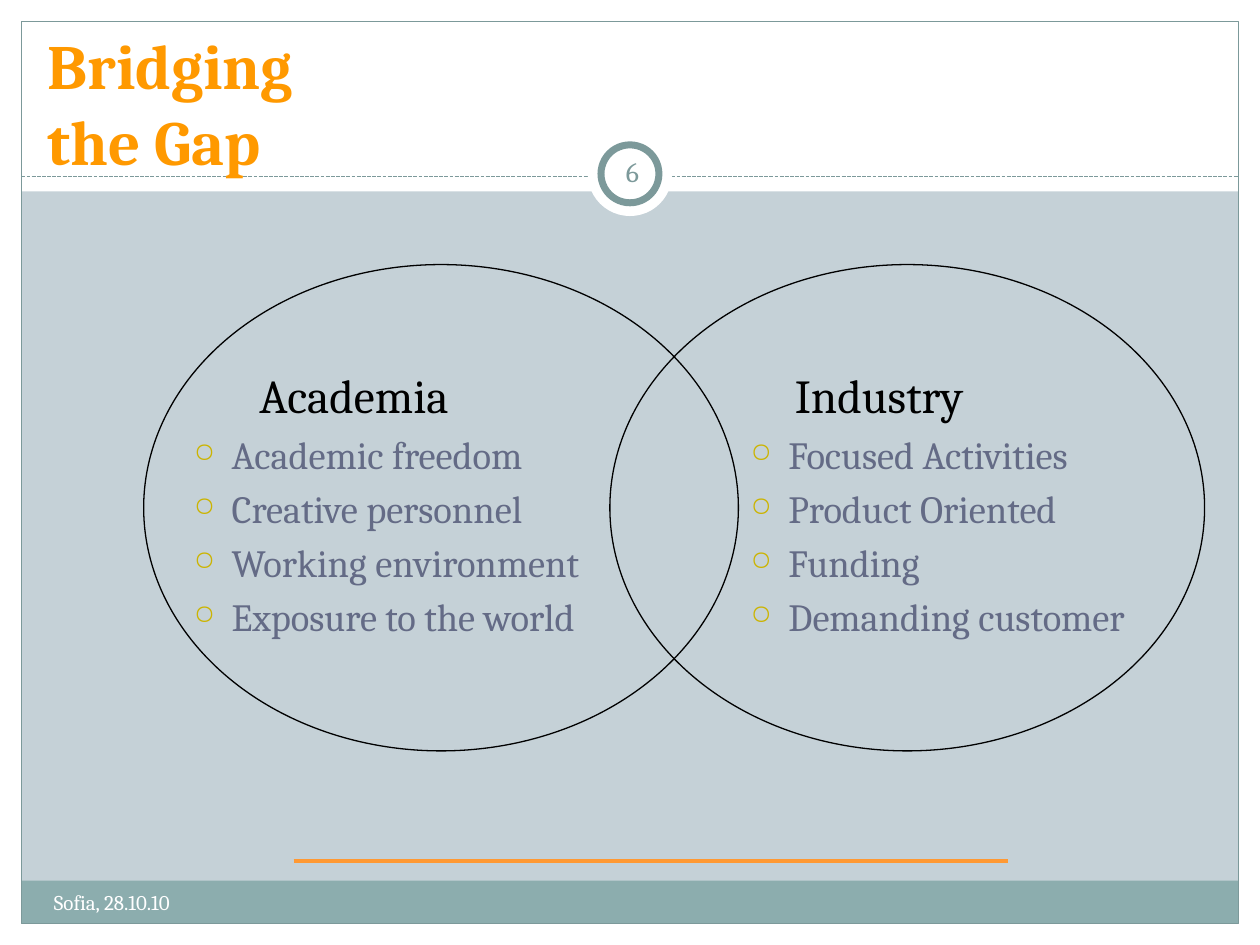
from lxml.etree import SubElement
from pptx import Presentation
from pptx.dml.color import RGBColor
from pptx.enum.dml import MSO_LINE
from pptx.enum.shapes import MSO_CONNECTOR, MSO_SHAPE as SHAPE
from pptx.enum.text import MSO_ANCHOR as ANCHOR, PP_ALIGN as ALIGN
from pptx.oxml.ns import qn
from pptx.util import Inches, Pt

WHITE, BLACK = RGBColor(255, 255, 255), RGBColor(0, 0, 0)
BACKDROP = RGBColor(0xC5, 0xD1, 0xD7)
BAND = RGBColor(0x8C, 0xAD, 0xAE)
FRAME = RGBColor(0x7C, 0x99, 0x9A)
TITLE_ORANGE = RGBColor(0xFF, 0x99, 0x00)
RULE_ORANGE = RGBColor(0xFF, 0x99, 0x33)
BULLET_TEXT = RGBColor(0x64, 0x6B, 0x86)
BULLET_MARK = "CCB400"
FONT = "Cambria"

# Content
TITLE = "Bridging \vthe Gap"
FOOTER = "Sofia, 28.10.10"
PAGE = "6"
# heading, heading indent, points, circle left, text left, text width
WORLDS = [
    ("Academia", 0.82, ["Academic freedom", "Creative personnel",
                        "Working environment", "Exposure to the world"], 1.14, 1.14, 4.41),
    ("Industry", 0.65, ["Focused Activities", "Product Oriented",
                        "Funding", "Demanding customer"], 4.84, 5.56, 4.44),
]

# Layout
WIDTH, HEIGHT = 10, 7.5
MARGIN = 0.17
INNER_W, INNER_H = WIDTH - 2 * MARGIN, HEIGHT - 2 * MARGIN
HEADER_H, DASH_Y, BADGE_Y = 1.52, 1.4, 1.38
FOOTER_Y, FOOTER_H = 6.99, 0.34
CIRCLE_Y, CIRCLE_W, CIRCLE_H = 2.1, 4.72, 3.86
TEXT_Y, TEXT_H = 2.86, 2.95

prs = Presentation()
prs.slide_width, prs.slide_height = Inches(WIDTH), Inches(HEIGHT)
slide = prs.slides.add_slide(prs.slide_layouts[6])
slide.background.fill.solid()
slide.background.fill.fore_color.rgb = BACKDROP


def add_shape(kind, left, top, width, height, fill=None, line=None, weight=0.75):
    shape = slide.shapes.add_shape(kind, *map(Inches, (left, top, width, height)))
    shape.shadow.inherit = False
    if fill is None:
        shape.fill.background()
    else:
        shape.fill.solid()
        shape.fill.fore_color.rgb = fill
    if line is None:
        shape.line.fill.background()
    else:
        shape.line.color.rgb = line
        shape.line.width = Pt(weight)


def add_rule(left, right, y, color, weight, dash=None):
    rule = slide.shapes.add_connector(
        MSO_CONNECTOR.STRAIGHT, *map(Inches, (left, y, right, y)))
    SubElement(rule._element.spPr, qn("a:effectLst"))
    rule.line.color.rgb = color
    rule.line.width = Pt(weight)
    if dash:
        rule.line.dash_style = dash


def add_box(left, top, width, height, anchor=ANCHOR.TOP):
    frame = slide.shapes.add_textbox(*map(Inches, (left, top, width, height))).text_frame
    frame.word_wrap = True
    frame.vertical_anchor = anchor
    return frame


def write(paragraph, text, size, color, bold=False):
    paragraph.text = text
    font = paragraph.font
    font.name, font.size, font.bold = FONT, Pt(size), bold
    font.color.rgb = color


def indent(paragraph, left, first=0.0):
    props = paragraph._p.get_or_add_pPr()
    props.set("marL", str(Inches(left)))
    props.set("indent", str(Inches(first)))
    return props


def add_bullet(paragraph):
    props = indent(paragraph, 0.6, -0.3)
    SubElement(SubElement(props, qn("a:buClr")), qn("a:srgbClr"), val=BULLET_MARK)
    SubElement(props, qn("a:buSzPct"), val="70000")
    SubElement(props, qn("a:buChar"), char="○")


# White margins, footer band and frame
for area in [(0, HEIGHT - MARGIN, WIDTH, MARGIN), (0, 0, WIDTH, HEADER_H),
             (0, 0, MARGIN, HEIGHT), (WIDTH - MARGIN, 0, MARGIN, HEIGHT)]:
    add_shape(SHAPE.RECTANGLE, *area, fill=WHITE)
add_shape(SHAPE.RECTANGLE, MARGIN, FOOTER_Y, INNER_W, FOOTER_H, fill=BAND)
add_shape(SHAPE.RECTANGLE, MARGIN, MARGIN, INNER_W, INNER_H, line=FRAME)
add_rule(MARGIN, WIDTH - MARGIN, DASH_Y, FRAME, 0.75, MSO_LINE.SQUARE_DOT)

# Page number badge
for size, ring in [(0.67, None), (0.46, FRAME)]:
    add_shape(SHAPE.OVAL, WIDTH / 2 - size / 2, BADGE_Y - size / 2, size, size,
              fill=WHITE, line=ring, weight=4)
add_rule(2.33, 8, 6.83, RULE_ORANGE, 2.25)
page = add_box(4.77, 1.12, 0.5, 0.48, ANCHOR.MIDDLE)
page.margin_left = page.margin_right = Inches(0.05)
page.paragraphs[0].alignment = ALIGN.CENTER
write(page.paragraphs[0], PAGE, 16, FRAME)

# Title and footer
title = add_box(0.28, 0.44, 9.33, 1.02, ANCHOR.BOTTOM)
write(title.paragraphs[0], TITLE, 36, TITLE_ORANGE, bold=True)
write(add_box(0.33, 7.01, 3.92, 0.4).paragraphs[0], FOOTER, 12, WHITE)

# Overlapping circles with their lists
for heading, heading_indent, points, circle_left, text_left, text_width in WORLDS:
    add_shape(SHAPE.OVAL, circle_left, CIRCLE_Y, CIRCLE_W, CIRCLE_H, line=BLACK)
    frame = add_box(text_left, TEXT_Y, text_width, TEXT_H)
    indent(frame.paragraphs[0], heading_indent)
    write(frame.paragraphs[0], heading, 27, BLACK)
    for point in points:
        item = frame.add_paragraph()
        item.level = 1
        item.space_before = Pt(4.4)
        add_bullet(item)
        write(item, point, 22, BULLET_TEXT)

prs.save("out.pptx")
